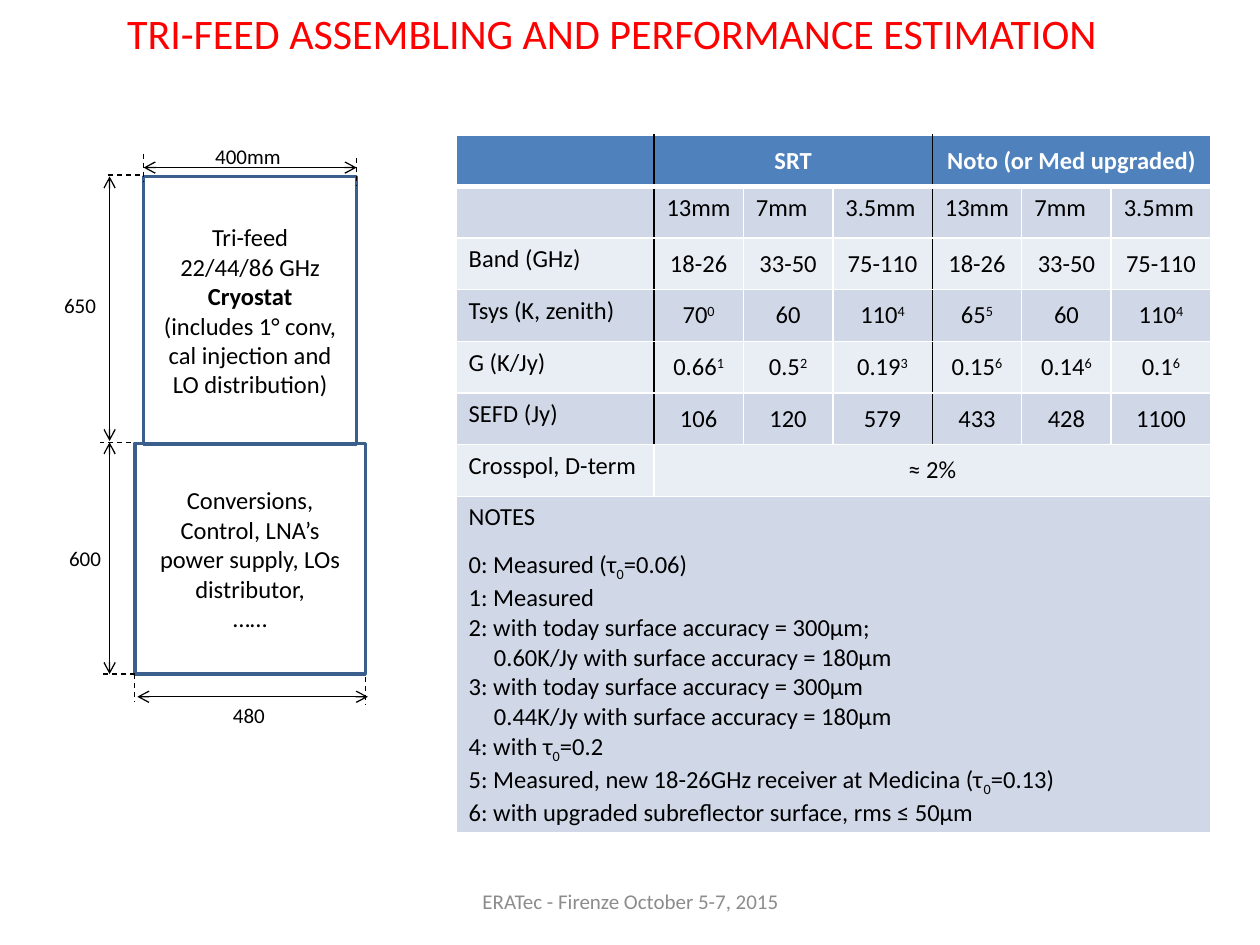
from pptx import Presentation
from pptx.util import Inches, Pt
from pptx.dml.color import RGBColor
from pptx.enum.dml import MSO_LINE
from pptx.enum.shapes import MSO_CONNECTOR, MSO_SHAPE
from pptx.enum.text import MSO_ANCHOR, PP_ALIGN
from pptx.oxml.ns import qn
from lxml.etree import SubElement

COLS, ROWS = 100, 75
BASELINES = {"^": "30000", "_": "-25000"}


def rgb(value):
    return RGBColor.from_string(value)


class Deck:
    font, ink, outline = "Calibri", "000000", "3A5F8C"
    header, bands = "4F81BD", ("E9EDF4", "D0D8E8")

    def __init__(self):
        self.prs = Presentation()
        self.prs.slide_width, self.prs.slide_height = Inches(10), Inches(7.5)
        self.s = self.prs.slides.add_slide(self.prs.slide_layouts[6])

    def x(self, col):
        return round(self.prs.slide_width * col / COLS)

    def y(self, row):
        return round(self.prs.slide_height * row / ROWS)

    def box(self, col, row, width, height):
        return self.x(col), self.y(row), self.x(width), self.y(height)

    def fill_text(self, tf, lines, size, color=None, center=False, bold=False):
        for i, line in enumerate(lines):
            p = tf.paragraphs[0] if i == 0 else tf.add_paragraph()
            p.alignment = PP_ALIGN.CENTER if center else PP_ALIGN.LEFT
            f = p.font
            f.name, f.size, f.color.rgb = self.font, Pt(size), rgb(color or self.ink)
            f.bold = bold or line.startswith("*")
            for part in line.lstrip("*").split("|"):
                if not part:
                    continue
                r = p.add_run()
                r.text = part.lstrip("^_")
                if part[0] in BASELINES:
                    r._r.get_or_add_rPr().set("baseline", BASELINES[part[0]])

    def text(self, place, line, size=12, color=None, center=False):
        tf = self.s.shapes.add_textbox(*self.box(*place)).text_frame
        tf.word_wrap = True
        if center:
            tf.vertical_anchor = MSO_ANCHOR.MIDDLE
        self.fill_text(tf, [line], size, color, center)

    def block(self, place, lines):
        sp = self.s.shapes.add_shape(MSO_SHAPE.RECTANGLE, *self.box(*place))
        sp.shadow.inherit = False
        sp.fill.background()
        sp.line.color.rgb, sp.line.width = rgb(self.outline), Pt(2)
        sp.text_frame.word_wrap = True
        sp.text_frame.vertical_anchor = MSO_ANCHOR.MIDDLE
        self.fill_text(sp.text_frame, lines, 14, center=True)

    def line(self, col1, row1, col2, row2, arrows=False):
        c = self.s.shapes.add_connector(
            MSO_CONNECTOR.STRAIGHT, self.x(col1), self.y(row1), self.x(col2), self.y(row2))
        c.line.color.rgb, c.line.width = rgb(self.ink), Pt(0.75)
        if arrows:
            ln = c.line._get_or_add_ln()
            for end in ("a:headEnd", "a:tailEnd"):
                SubElement(ln, qn(end), type="arrow")
        else:
            c.line.dash_style = MSO_LINE.DASH
        SubElement(c._element.spPr, qn("a:effectLst"))

    def borders(self, cell, **edges):
        tcPr = cell._tc.get_or_add_tcPr()
        for side in "LRTB":
            color, width = edges.get(side, ("FFFFFF", 1))
            ln = SubElement(tcPr, qn(f"a:ln{side}"), w=str(Pt(width)))
            SubElement(SubElement(ln, qn("a:solidFill")), qn("a:srgbClr"), val=color)

    def table(self, place, widths, heights, rows, ruled_rows, rules):
        tbl = self.s.shapes.add_table(len(rows), len(widths), *self.box(*place)).table
        for column, width in zip(tbl.columns, widths):
            column.width = self.x(width)
        for row, height in zip(tbl.rows, heights):
            row.height = self.y(height)
        black = (self.ink, 1)
        for i, row in enumerate(rows):
            fill = self.bands[i % 2] if i else self.header
            for j, value in enumerate(row):
                cell = tbl.cell(i, j)
                last = j
                while value is not None and last + 1 < len(row) and row[last + 1] is None:
                    last += 1
                edges = {"B": ("FFFFFF", 3)} if i == 0 else {}
                if i < ruled_rows:
                    edges.update({"L": black} if j in rules else {})
                    edges.update({"R": black} if last + 1 in rules else {})
                self.borders(cell, **edges)
                cell.fill.solid()
                cell.fill.fore_color.rgb = rgb(fill)
                if value is None:
                    continue
                if last > j:
                    cell.merge(tbl.cell(i, last))
                center = j > 0 and i != 1
                if center:
                    cell.vertical_anchor = MSO_ANCHOR.MIDDLE
                self.fill_text(cell.text_frame, value.split("\n"), 14,
                               "FFFFFF" if i == 0 else None, center, i == 0)
        return tbl


def main():
    d = Deck()
    d.text((9.1, 0.1, 81.9, 5), "TRI-FEED ASSEMBLING AND PERFORMANCE ESTIMATION", 24, "FF0000")
    d.text((34.2, 69.5, 31.7, 4), "ERATec - Firenze October 5-7, 2015", 12, "8C8C8C", True)

    d.block((11.4, 14, 16.9, 21.3), [
        "Tri-feed", "22/44/86 GHz", "*Cryostat",
        "(includes 1° conv, cal injection and LO distribution)"])
    d.block((10.7, 35.2, 18.3, 18.3), [
        "Conversions, Control, LNA’s power supply, LOs distributor,", "……"])

    for col, row in ((11.1, 13.9), (10.4, 35.1), (10.7, 53.5)):
        d.line(col, row, col - 2.5, row)
    for col, row in ((11.4, 12.2), (28.3, 12.5), (10.7, 53.5), (29, 53.7)):
        d.line(col, row, col, row + 2.2)
    for ends in ((8.7, 14, 8.7, 35), (8.7, 35.1, 8.7, 53.5),
                 (11.4, 13.3, 28.3, 13.3), (10.9, 55.3, 29.2, 55.3)):
        d.line(*ends, arrows=True)
    for col, row, width, label in ((16.1, 10.9, 8, "400mm"), (4.1, 22.7, 5.1, "650"),
                                   (4.5, 42.8, 5.8, "600"), (17.5, 55.3, 4.8, "480")):
        d.text((col, row, width, 3), label)

    notes = "\n".join([
        "NOTES",
        "0: Measured (τ|_0|=0.06)",
        "1: Measured",
        "2: with today surface accuracy = 300μm;",
        "0.60K/Jy with surface accuracy = 180μm",
        "3: with today surface accuracy = 300μm",
        "0.44K/Jy with surface accuracy = 180μm",
        "4: with τ|_0|=0.2",
        "5: Measured, new 18-26GHz receiver at Medicina (τ|_0|=0.13)",
        "6: with upgraded subreflector surface, rms ≤ 50μm"])
    rows = [
        ["", "SRT", None, None, "Noto (or Med upgraded)", None, None],
        [""] + ["13mm", "7mm", "3.5mm"] * 2,
        ["Band (GHz)"] + ["18-26", "33-50", "75-110"] * 2,
        ["Tsys (K, zenith)", "70|^0", "60", "110|^4", "65|^5", "60", "110|^4"],
        ["G (K/Jy)", "0.66|^1", "0.5|^2", "0.19|^3", "0.15|^6", "0.14|^6", "0.1|^6"],
        ["SEFD (Jy)", "106", "120", "579", "433", "428", "1100"],
        ["Crosspol, D-term", "≈ 2%"] + [None] * 5,
        [notes] + [None] * 6]
    tbl = d.table((36.2, 10.7, 59.8, 54.1), [15.7] + [7.1, 7.1, 7.9] * 2,
                  [4.1] * 7 + [25.2], rows, ruled_rows=6, rules=(1, 4))
    note_lines = tbl.cell(7, 0).text_frame.paragraphs
    note_lines[1].space_before = Pt(10)
    for p in note_lines:
        if p.text.startswith(("0.60", "0.44")):
            p._p.get_or_add_pPr().set("marL", str(d.x(2)))

    d.prs.save("out.pptx")


if __name__ == "__main__":
    main()
